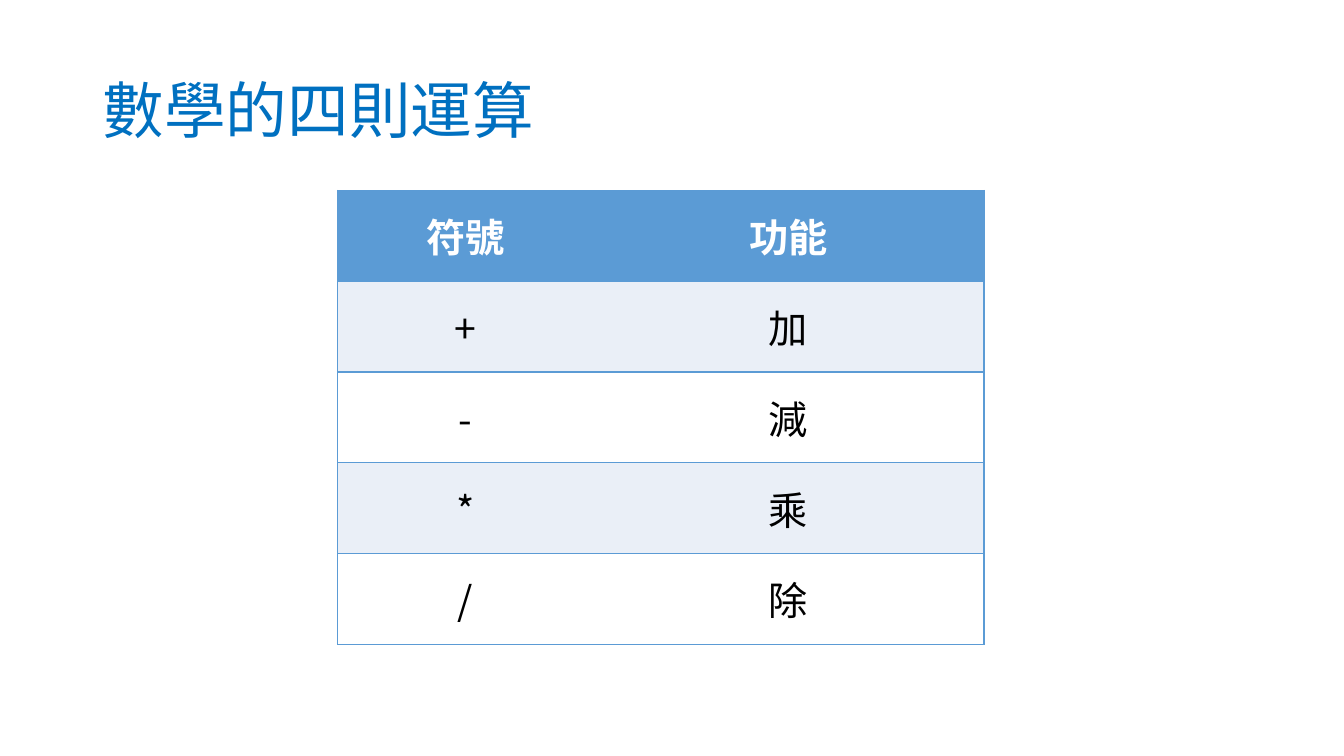
from lxml.etree import SubElement
from pptx import Presentation
from pptx.dml.color import RGBColor
from pptx.enum.text import MSO_ANCHOR as Anchor, PP_ALIGN as Align
from pptx.oxml.ns import qn
from pptx.util import Inches, Pt

FONT = "Noto Sans CJK SC"
COLORS = {
    "title": "0070C0",
    "accent": "5B9BD5",
    "band": "EAEFF7",
    "plain": "FFFFFF",
    "header_text": "FFFFFF",
    "body_text": "000000",
}
OPERATIONS = [("符號", "功能"), ("+", "加"), ("-", "減"), ("*", "乘"), ("/", "除")]
COLUMN_WIDTHS = [2.53, 3.88]
ROW_HEIGHT = 0.9


def write(frame, wording, size, color, bold=False, align=Align.LEFT):
    paragraph = frame.paragraphs[0]
    paragraph.alignment = align
    run = paragraph.add_run()
    run.text = wording
    formats = {"name": FONT, "size": Pt(size), "bold": bold}
    for attribute, value in formats.items():
        setattr(run.font, attribute, value)
    run.font.color.rgb = RGBColor.from_string(COLORS[color])
    SubElement(run._r.get_or_add_rPr(), qn("a:ea"), typeface=FONT)
    return paragraph


def add_title(slide, wording):
    title = slide.shapes.add_textbox(
        Inches(0.92), Inches(0.4), Inches(11.5), Inches(1.45)
    )
    frame = title.text_frame
    frame.word_wrap = True
    frame.vertical_anchor = Anchor.MIDDLE
    write(frame, wording, 44, "title").line_spacing = 0.9


def add_borders(cell, visible_sides):
    properties = cell._tc.get_or_add_tcPr()
    for side in "LRTB":
        border = SubElement(properties, qn(f"a:ln{side}"), w=str(Pt(1)))
        if side in visible_sides:
            fill = SubElement(border, qn("a:solidFill"))
            SubElement(fill, qn("a:srgbClr"), val=COLORS["accent"])
        else:
            SubElement(border, qn("a:noFill"))


def fill_cell(cell, wording, row, column):
    is_header = row == 0
    add_borders(cell, "LTB" if column == 0 else "RTB")
    background = "accent" if is_header else "band" if row % 2 else "plain"
    cell.fill.solid()
    cell.fill.fore_color.rgb = RGBColor.from_string(COLORS[background])
    cell.vertical_anchor = Anchor.MIDDLE
    text_color = "header_text" if is_header else "body_text"
    write(cell.text_frame, wording, 28, text_color, is_header, Align.CENTER)


def add_operations(slide, operations):
    table = slide.shapes.add_table(
        len(operations), len(COLUMN_WIDTHS),
        Inches(3.35), Inches(1.89),
        Inches(sum(COLUMN_WIDTHS)), Inches(ROW_HEIGHT * len(operations)),
    ).table
    for column, width in zip(table.columns, COLUMN_WIDTHS):
        column.width = Inches(width)
    for row, wordings in enumerate(operations):
        table.rows[row].height = Inches(ROW_HEIGHT)
        for column, wording in enumerate(wordings):
            fill_cell(table.cell(row, column), wording, row, column)


def main():
    deck = Presentation()
    deck.slide_width, deck.slide_height = Inches(13.33), Inches(7.5)
    slide = deck.slides.add_slide(deck.slide_layouts[6])
    add_title(slide, "數學的四則運算")
    add_operations(slide, OPERATIONS)
    deck.save("out.pptx")


if __name__ == "__main__":
    main()
